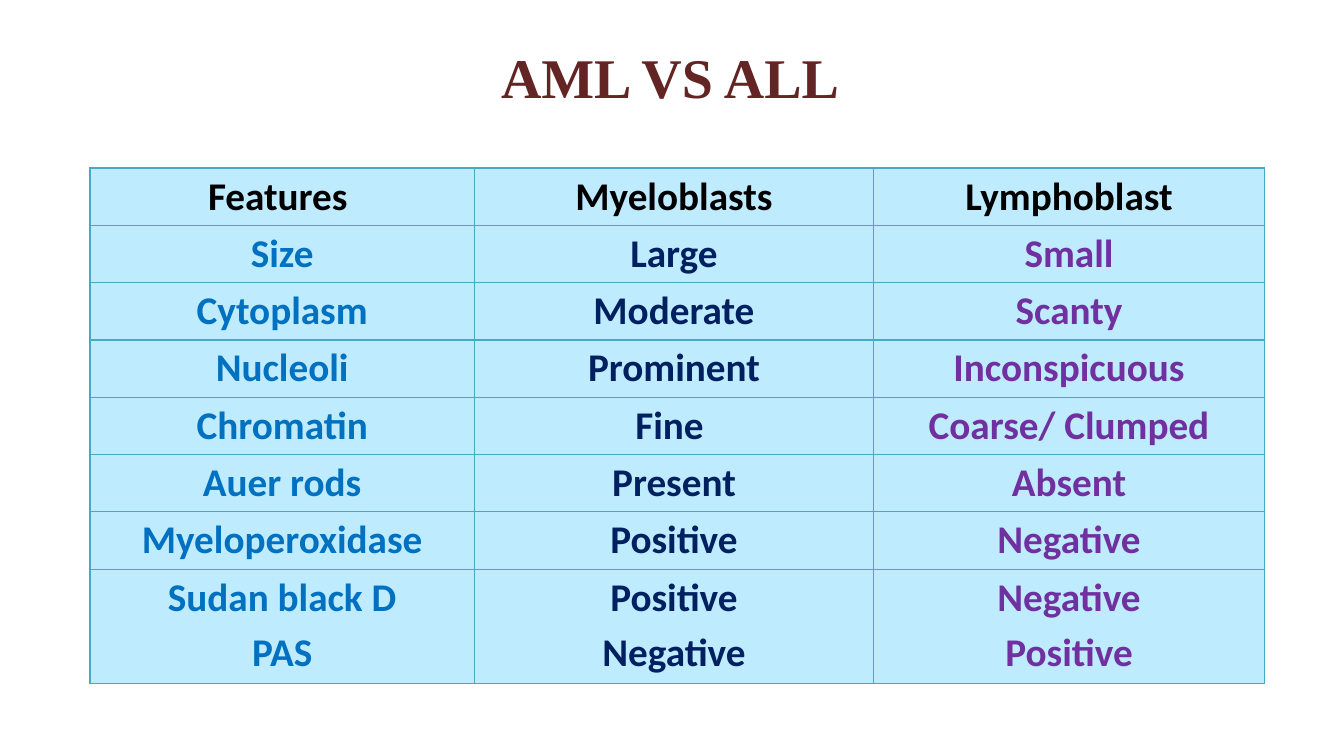
import pptx
import pptx.dml.color
import pptx.enum.text
import pptx.oxml
import pptx.oxml.ns
import pptx.util

Inches = pptx.util.Inches
Pt = pptx.util.Pt

COLORS = {
    "title": "632523",
    "header": "000000",
    "feature": "0070C0",
    "myeloblast": "002060",
    "lymphoblast": "7030A0",
    "cell": "BFEBFF",
    "border": "46AAC5",
}

COLUMNS = [("feature", 2.86), ("myeloblast", 2.97), ("lymphoblast", 2.91)]

COMPARISON = [
    ("Features ", "Myeloblasts", "Lymphoblast"),
    ("Size", "Large", "Small"),
    ("Cytoplasm", "Moderate", "Scanty"),
    ("Nucleoli", "Prominent", "Inconspicuous"),
    ("Chromatin", "Fine ", "Coarse/ Clumped"),
    ("Auer rods", "Present", "Absent"),
    ("Myeloperoxidase", "Positive", "Negative"),
    ("Sudan black D\nPAS", "Positive\nNegative", "Negative\nPositive"),
]


def rgb(name):
    """Return the named palette colour."""
    return pptx.dml.color.RGBColor.from_string(COLORS[name])


def style_font(font, face, size, color):
    """Apply a bold face, size and colour to a font."""
    font.name = face
    font.size = Pt(size)
    font.bold = True
    font.color.rgb = rgb(color)


def set_borders(cell):
    """Draw a thin line on all four sides of a cell."""
    properties = cell._tc.get_or_add_tcPr()
    for position, side in enumerate(("lnL", "lnR", "lnT", "lnB")):
        line = pptx.oxml.parse_xml(
            f'<a:{side} {pptx.oxml.ns.nsdecls("a")} w="{Pt(0.75)}"><a:solidFill>'
            f'<a:srgbClr val="{COLORS["border"]}"/></a:solidFill></a:{side}>'
        )
        properties.insert(position, line)


def fill_cell(cell, wording, color):
    """Write centred wording into a filled and bordered cell."""
    side_margin = 0.07
    cell.margin_left = cell.margin_right = Inches(side_margin)
    cell.margin_top = cell.margin_bottom = Inches(side_margin / 2)
    cell.fill.solid()
    cell.fill.fore_color.rgb = rgb("cell")
    set_borders(cell)
    cell.text_frame.text = wording
    for paragraph in cell.text_frame.paragraphs:
        paragraph.alignment = pptx.enum.text.PP_ALIGN.CENTER
        style_font(paragraph.runs[0].font, "Calibri", 21, color)
    for paragraph in cell.text_frame.paragraphs[1:]:
        paragraph.space_before = Pt(4.2)


def add_title(slide, left, top, width, height):
    """Place the slide title in the given box."""
    title = slide.shapes.add_textbox(
        Inches(left), Inches(top), Inches(width), Inches(height)
    )
    frame = title.text_frame
    frame.word_wrap = False
    frame.auto_size = pptx.enum.text.MSO_AUTO_SIZE.SHAPE_TO_FIT_TEXT
    frame.vertical_anchor = pptx.enum.text.MSO_ANCHOR.MIDDLE
    frame.text = "AML VS ALL"
    style_font(frame.paragraphs[0].runs[0].font, "Times New Roman", 30, "title")


def add_comparison(slide, left, top, width, height):
    """Place the blast comparison table in the given box."""
    table = slide.shapes.add_table(
        len(COMPARISON), len(COLUMNS),
        Inches(left), Inches(top), Inches(width), Inches(height),
    ).table
    table_width = sum(share for _, share in COLUMNS)
    for column, (_, share) in zip(table.columns, COLUMNS):
        column.width = Inches(width * share / table_width)

    line_counts = [features[0].count("\n") + 1 for features in COMPARISON]
    for row, line_count in zip(table.rows, line_counts):
        row.height = Inches(height * line_count / sum(line_counts))

    for row_index, features in enumerate(COMPARISON):
        for column_index, wording in enumerate(features):
            color = COLUMNS[column_index][0] if row_index else "header"
            fill_cell(table.cell(row_index, column_index), wording, color)


def main():
    """Build and save the slide."""
    presentation = pptx.Presentation()
    presentation.slide_width = Inches(10)
    presentation.slide_height = Inches(10 * 9 / 16)
    slide = presentation.slides.add_slide(presentation.slide_layouts[6])
    add_comparison(slide, 0.67, 1.25, 8.74, 3.82)
    add_title(slide, 3.63, 0.26, 2.74, 0.61)
    presentation.save("out.pptx")


if __name__ == "__main__":
    main()
